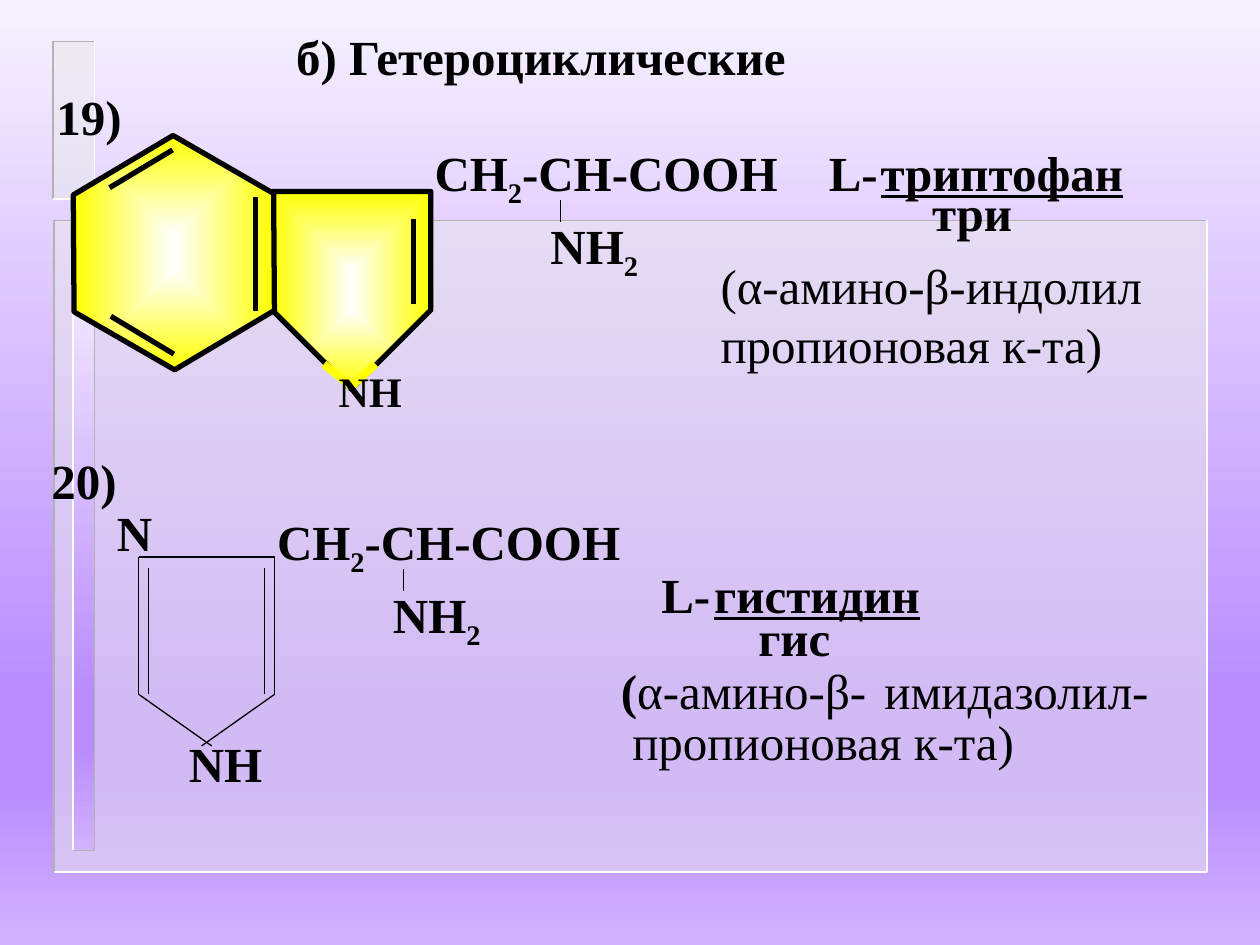
from lxml import etree
from pptx import Presentation
from pptx import oxml
from pptx.dml.color import RGBColor
from pptx.enum import shapes as kind, text as txt
from pptx.oxml import ns
from pptx.util import Inches, Pt

BLACK = RGBColor(0, 0, 0)
WHITE = RGBColor(255, 255, 255)
GRAY = RGBColor(0xB2, 0xB2, 0xB2)
PALE = RGBColor(0xEA, 0xEA, 0xEA)
YELLOW = RGBColor(255, 255, 0)
LILAC = [(0, RGBColor(0xF7, 0xF2, 0xFF)), (74, RGBColor(0xBA, 0x8C, 0xFF)),
         (83, RGBColor(0xBA, 0x8C, 0xFF)), (100, RGBColor(0xD1, 0xB2, 0xFF))]
GLOW = [(0, WHITE), (100, YELLOW)]
DOWN = '<a:lin ang="5400000" scaled="0"/>'
CENTER = ('<a:path path="{}"><a:fillToRect l="50000" t="50000" '
          'r="50000" b="50000"/></a:path>')
FONT = "Times New Roman"
THIN, THICK = 0.75, 3

TITLE = ("б) Гетероциклические", 2.25, 0.16, 4.11, 0.57)
PANELS = [
    (0.43, 1.75, 9.15, 5.17, None, GRAY, WHITE),
    (0.58, 1.92, 0.17, 4.83, LILAC, WHITE, GRAY),
    (0.42, 0.33, 0.33, 1.25, None, GRAY, WHITE),
]
INDOLE = [(2.16, 1.52), (3.42, 1.52), (3.42, 2.46), (2.79, 3.09), (2.16, 2.46)]
NOTCH = [(2.57, 2.89), (2.79, 3.07), (2.98, 2.89)]
DOUBLE = [
    (0.87, 1.49, 1.37, 1.19), (0.88, 2.51, 1.38, 2.81),
    (2.03, 1.56, 2.03, 2.47), (3.28, 1.74, 3.28, 2.41),
]
SINGLE = [
    (3.43, 1.51, 3.43, 1.67),
    (1.1, 4.42, 2.18, 4.42), (1.1, 4.42, 1.1, 5.51), (2.18, 4.42, 2.18, 5.51),
    (2.18, 5.51, 1.6, 5.92), (1.1, 5.51, 1.68, 5.92),
    (1.18, 4.51, 1.18, 5.51), (2.1, 4.51, 2.1, 5.51),
]
CHAINS = [(3.35, 1.08), (2.1, 4.01)]
BOLD = [
    ("19)", 0.35, 0.64, 0.73), ("20)", 0.31, 3.53, 0.73),
    ("L-", 6.48, 1.08, 0.59), ("три", 7.3, 1.4, 0.87),
    ("L-", 5.15, 4.43, 0.59), ("гис", 5.92, 4.77, 0.77),
    ("N", 0.83, 3.94, 0.48), ("NН", 1.4, 5.77, 0.78),
]
NAMES = [("триптофан", 6.89, 1.08, 2.13), ("гистидин", 5.57, 4.43, 1.83)]
PLAIN = [
    ("(α-амино-β-индолил\nпропионовая к-та)", 5.62, 1.98, 3.65, 1.04),
    ("имидазолил-", 6.92, 5.19, 2.31),
    ("пропионовая к-та)", 4.92, 5.6, 3.24),
]

deck = Presentation()
deck.slide_width, deck.slide_height = Inches(10), Inches(7.5)
slide = deck.slides.add_slide(deck.slide_layouts[5])
shapes = slide.shapes


def blend(solid, stops, way):
    marks = "".join(f'<a:gs pos="{at * 1000}"><a:srgbClr val="{tone}"/></a:gs>'
                    for at, tone in stops)
    grad = oxml.parse_xml(f'<a:gradFill {ns.nsdecls("a")} rotWithShape="1">'
                          f'<a:gsLst>{marks}</a:gsLst>{way}</a:gradFill>')
    solid.getparent().replace(solid, grad)


def paint(shape, stops, way):
    shape.fill.solid()
    blend(shape.element.spPr.find(ns.qn("a:solidFill")), stops, way)


def outline(points, tone, width, close=False):
    spots = [(Inches(x), Inches(y)) for x, y in points]
    pen = shapes.build_freeform(*spots[0])
    pen.add_line_segments(spots[1:], close=close)
    shape = pen.convert_to_shape()
    shape.shadow.inherit = False
    shape.fill.background()
    shape.line.color.rgb, shape.line.width = tone, Pt(width)
    return shape


def panel(x, y, w, h, stops, upper, lower):
    box = shapes.add_shape(kind.MSO_SHAPE.RECTANGLE, *map(Inches, (x, y, w, h)))
    box.shadow.inherit = False
    box.line.fill.background()
    if stops:
        paint(box, stops, DOWN)
    else:
        box.fill.solid()
        box.fill.fore_color.rgb = PALE
        tone = box.element.spPr.find(".//" + ns.qn("a:srgbClr"))
        etree.SubElement(tone, ns.qn("a:alpha")).set("val", "50000")
    outline([(x + w, y), (x, y), (x, y + h)], upper, 1)
    outline([(x + w, y), (x + w, y + h), (x, y + h)], lower, 1)


def bond(ends, width):
    line = shapes.add_connector(kind.MSO_CONNECTOR.STRAIGHT, *map(Inches, ends))
    line.line.color.rgb, line.line.width = BLACK, Pt(width)
    etree.SubElement(line.element.spPr, ns.qn("a:effectLst"))


def style(para, size, bold, under=False):
    font = para.font
    font.name, font.size, font.bold = FONT, Pt(size), bold
    font.underline, font.color.rgb = under, BLACK
    para.alignment = txt.PP_ALIGN.LEFT


def label(words, x, y, w, h=0.57, size=28, bold=True, under=False):
    box = shapes.add_textbox(*map(Inches, (x, y, w, h)))
    frame = box.text_frame
    frame.word_wrap = False
    frame.auto_size = txt.MSO_AUTO_SIZE.SHAPE_TO_FIT_TEXT
    frame.text = words
    for para in frame.paragraphs:
        style(para, size, bold, under)
    return frame


def formula(parts, x, y, w):
    para = label("", x, y, w).paragraphs[0]
    for part in parts:
        run = para.add_run()
        run.text = part
        if part.isdigit():
            run.font._element.set("baseline", "-25000")


def chain(x, y):
    formula(["СН", "2", "-СН-СООН"], x, y, 2.95)
    bond((x + 1.1, y + 0.51, x + 1.1, y + 0.68), THIN)
    formula(["NН", "2"], x + 0.92, y + 0.58, 0.92)


slide.background.fill.solid()
blend(slide.element.find(".//" + ns.qn("p:bgPr"))[0], LILAC, DOWN)
for row in PANELS:
    panel(*row)

words, *place = TITLE
title = shapes.title
title.left, title.top, title.width, title.height = map(Inches, place)
title.text_frame.text = words
title.text_frame.word_wrap = False
title.text_frame.vertical_anchor = txt.MSO_ANCHOR.TOP
style(title.text_frame.paragraphs[0], 28, True)

paint(outline(INDOLE, BLACK, THICK, True), GLOW, CENTER.format("rect"))
ring = shapes.add_shape(kind.MSO_SHAPE.HEXAGON,
                        *map(Inches, (0.45, 1.21, 1.86, 1.59)))
ring.adjustments[0], ring.adjustments[1] = 0.293, 1.155
ring.rotation = 269.6
ring.shadow.inherit = False
ring.line.color.rgb, ring.line.width = BLACK, Pt(THICK)
paint(ring, GLOW, CENTER.format("shape"))
outline(NOTCH, YELLOW, 4.5)
amine = label("NН", 2.59, 2.85, 0.7, 0.5, 24)
amine.vertical_anchor = txt.MSO_ANCHOR.MIDDLE

for ends in DOUBLE:
    bond(ends, THICK)
for ends in SINGLE:
    bond(ends, THIN)
for spot in CHAINS:
    chain(*spot)
for row in BOLD:
    label(*row)
for row in NAMES:
    label(*row, under=True)
for row in PLAIN:
    label(*row, bold=False)
prefix = label("", 4.83, 5.19, 2.21).paragraphs[0]
prefix.add_run().text = "("
rest = prefix.add_run()
rest.text, rest.font.bold = "α-амино-β-", False

deck.save("out.pptx")
